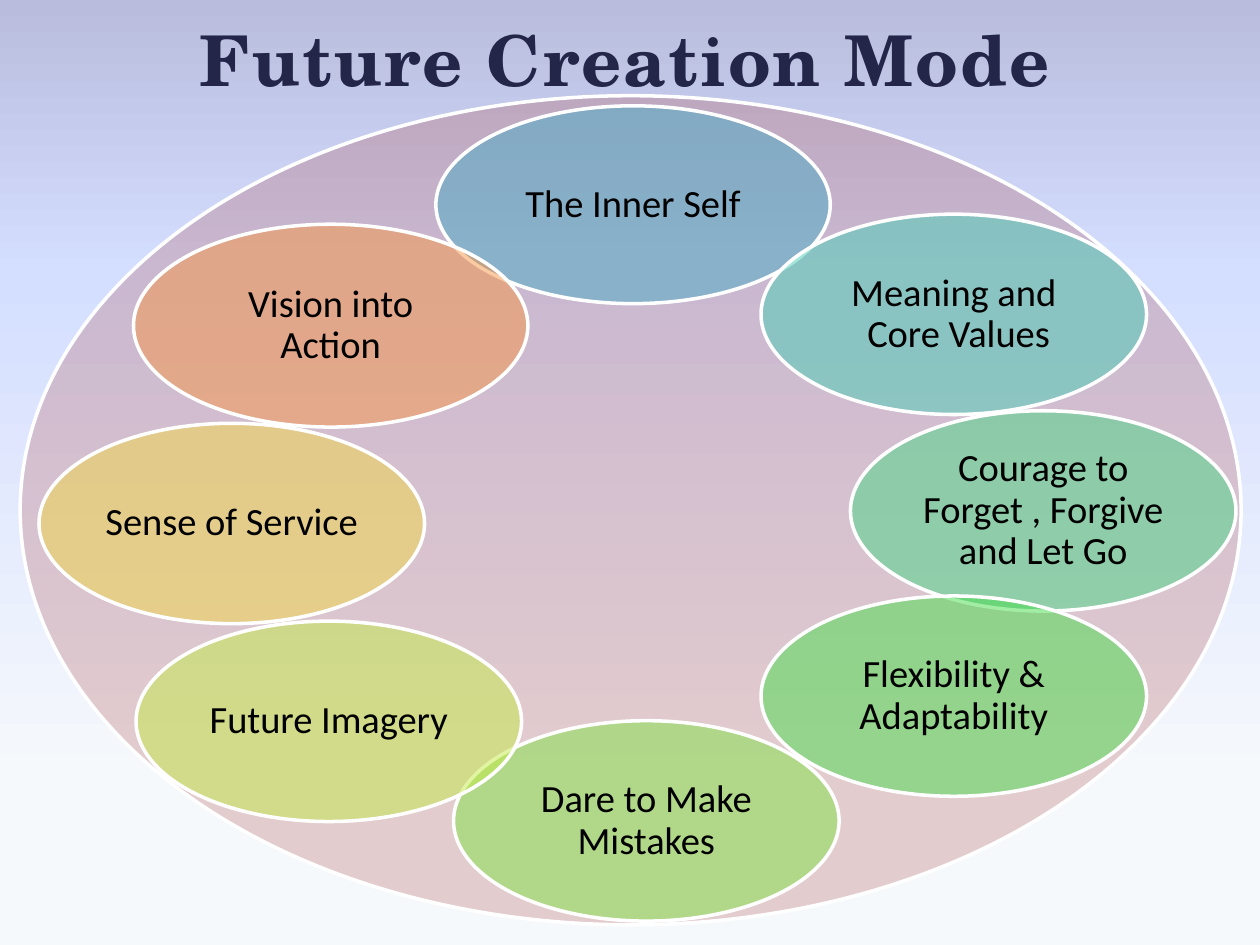
import pptx
import pptx.dml.color
import pptx.enum.shapes
import pptx.enum.text
import pptx.oxml
import pptx.oxml.ns
import pptx.util
from lxml import etree

Inches = pptx.util.Inches
Pt = pptx.util.Pt
RGBColor = pptx.dml.color.RGBColor
qn = pptx.oxml.ns.qn

WHITE = RGBColor(0xFF, 0xFF, 0xFF)
BLACK = RGBColor(0x00, 0x00, 0x00)
NAVY = RGBColor(0x23, 0x26, 0x49)
MAROON = RGBColor(0xAE, 0x49, 0x46)
BLUE = RGBColor(0x4B, 0xAC, 0xC6)
TEAL = RGBColor(0x49, 0xCE, 0xB6)
MINT = RGBColor(0x48, 0xD6, 0x84)
GREEN = RGBColor(0x47, 0xDD, 0x4B)
LIME = RGBColor(0x80, 0xE4, 0x46)
CITRON = RGBColor(0xC3, 0xEB, 0x46)
YELLOW = RGBColor(0xF1, 0xD7, 0x46)
ORANGE = RGBColor(0xF7, 0x96, 0x46)
SKY_TOP = RGBColor(0xB9, 0xBC, 0xDD)
SKY_MIDDLE = RGBColor(0xD4, 0xDE, 0xFF)
SKY_BOTTOM = RGBColor(0xF6, 0xF9, 0xFC)

SKY_STOPS = [(0, SKY_TOP), (29, SKY_MIDDLE), (83, SKY_BOTTOM), (100, SKY_BOTTOM)]
TITLE_FONT = {"name": "TeX Gyre Schola", "size": Pt(40), "bold": True}
STAGE_FONT = {"name": "Calibri", "size": Pt(22)}
CENTER = pptx.enum.text.PP_ALIGN.CENTER
TITLE_PARAGRAPH = {"alignment": CENTER, "space_before": Pt(8)}
STAGE_PARAGRAPH = {"alignment": CENTER, "line_spacing": 0.9, "space_after": Pt(7.7)}
STAGE_FRAME = {
    "word_wrap": True,
    "vertical_anchor": pptx.enum.text.MSO_ANCHOR.MIDDLE,
    "margin_left": Inches(0.03),
    "margin_right": Inches(0.03),
    "margin_top": Inches(0.03),
    "margin_bottom": Inches(0.03),
}
STAGE_SIZE = (3.06, 1.59)
STAGES = [
    ("The Inner Self", (3.46, 0.84), (3.13, 1.57), BLUE, True),
    ("Meaning and Core Values ", (6.04, 1.7), STAGE_SIZE, TEAL, True),
    ("Courage to Forget , Forgive and Let Go", (6.75, 3.26), STAGE_SIZE, MINT, True),
    ("Flexibility & Adaptability", (6.04, 4.73), STAGE_SIZE, GREEN, True),
    ("Dare to Make Mistakes", (3.6, 5.72), STAGE_SIZE, LIME, True),
    ("Future Imagery", (1.08, 4.93), STAGE_SIZE, CITRON, True),
    ("Sense of Service", (0.31, 3.36), STAGE_SIZE, YELLOW, True),
    ("Vision into Action", (1.06, 1.78), (3.13, 1.61), ORANGE, False),
]


def apply_format(target, values):
    for key, value in values.items():
        setattr(target, key, value)


def add_solid_fill(parent, color):
    solid = etree.SubElement(parent, qn("a:solidFill"))
    etree.SubElement(solid, qn("a:srgbClr"), val=str(color))


def paint_sky(slide):
    sky = slide.background.fill
    sky.gradient()
    sky.gradient_angle = 270
    stop_list = slide.background._cSld.find(".//" + qn("a:gsLst"))
    for stop in list(stop_list):
        stop_list.remove(stop)
    for percent, color in SKY_STOPS:
        stop = etree.SubElement(stop_list, qn("a:gs"), pos=str(percent * 1000))
        etree.SubElement(stop, qn("a:srgbClr"), val=str(color))


def write_text(frame, text, paragraph_format, font_format, color, right_to_left):
    paragraph = frame.paragraphs[0]
    apply_format(paragraph, paragraph_format)
    if right_to_left:
        paragraph._p.get_or_add_pPr().set("rtl", "1")
    run = paragraph.add_run()
    run.text = text
    apply_format(run.font, font_format)
    run.font.color.rgb = color
    return run


def add_title(slide):
    title = slide.shapes.title
    apply_format(title, {"left": Inches(0.47), "top": Inches(0.08),
                         "width": Inches(8.98), "height": Inches(0.94)})
    frame = title.text_frame
    apply_format(frame, {"word_wrap": True,
                         "auto_size": pptx.enum.text.MSO_AUTO_SIZE.NONE,
                         "vertical_anchor": pptx.enum.text.MSO_ANCHOR.TOP})
    run = write_text(frame, "Future Creation Mode", TITLE_PARAGRAPH,
                     TITLE_FONT, NAVY, True)
    letters = run._r.get_or_add_rPr()
    letters.set("spc", "120")
    outline = etree.Element(qn("a:ln"), w=str(Pt(1)))
    add_solid_fill(outline, NAVY)
    letters.insert(0, outline)


def add_oval(slide, position, size, color, opacity):
    oval = slide.shapes.add_shape(pptx.enum.shapes.MSO_SHAPE.OVAL,
                                  *map(Inches, position + size))
    oval.shadow.inherit = False
    oval.fill.solid()
    oval.fill.fore_color.rgb = color
    tint = oval._element.spPr.find(qn("a:solidFill")).find(qn("a:srgbClr"))
    etree.SubElement(tint, qn("a:alpha"), val=str(opacity * 1000))
    oval.line.color.rgb = WHITE
    oval.line.width = Pt(2)
    return oval


def add_stage(slide, text, position, size, color, right_to_left):
    stage = add_oval(slide, position, size, color, 50)
    apply_format(stage.text_frame, STAGE_FRAME)
    write_text(stage.text_frame, text, STAGE_PARAGRAPH, STAGE_FONT,
               BLACK, right_to_left)


def main():
    deck = pptx.Presentation()
    deck.slide_width = Inches(10)
    deck.slide_height = Inches(7.5)
    slide = deck.slides.add_slide(deck.slide_layouts[5])
    paint_sky(slide)
    add_title(slide)
    add_oval(slide, (0.16, 0.76), (9.69, 6.58), MAROON, 25)
    for stage in STAGES:
        add_stage(slide, *stage)
    deck.save("out.pptx")


if __name__ == "__main__":
    main()
